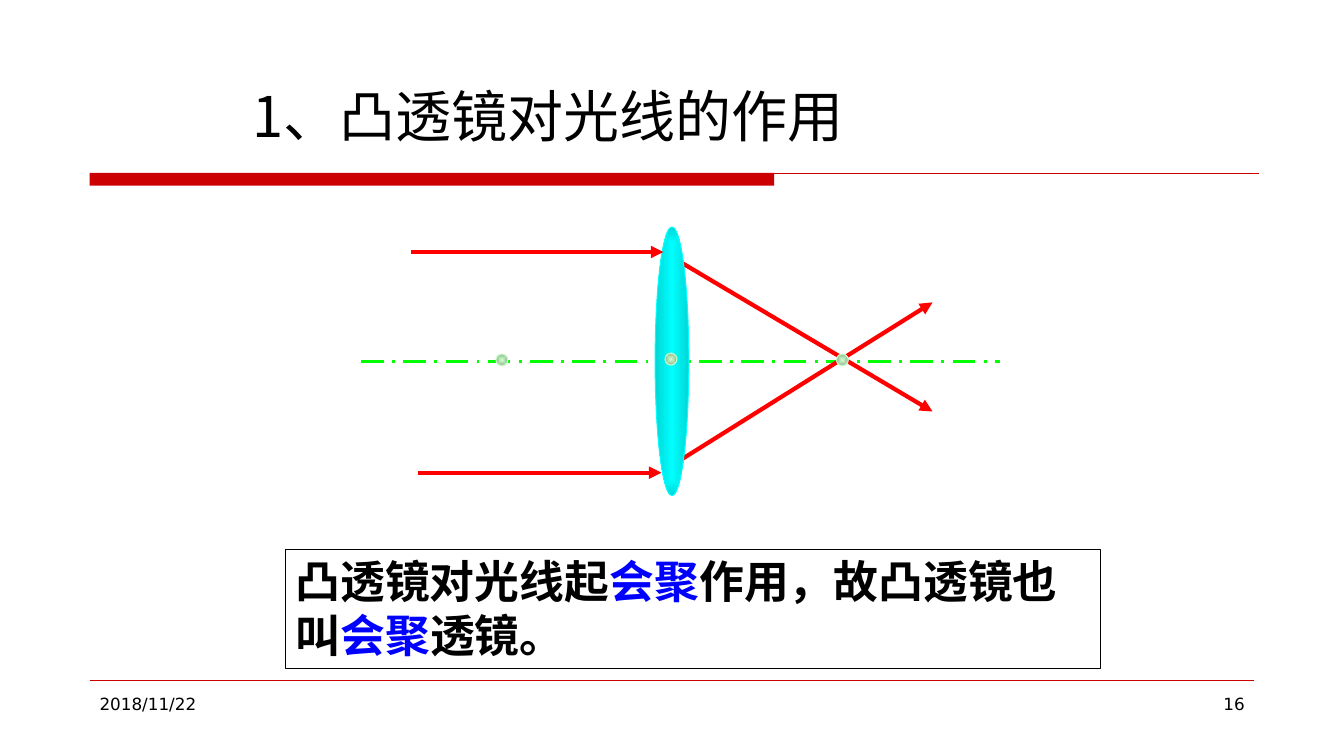
import pptx
import pptx.util
import pptx.oxml
import pptx.oxml.ns
from pptx.dml.color import RGBColor
from pptx.enum.dml import MSO_LINE
from pptx.enum.shapes import MSO_CONNECTOR, MSO_SHAPE
from pptx.enum.text import PP_ALIGN
from pptx.util import Cm

BLACK, RED, CRIMSON, GREEN, BLUE = "000000", "FF0000", "CC0000", "00FF00", "0000FF"
CJK_FONT = "Noto Sans CJK SC"
NAMESPACE = pptx.oxml.ns.nsdecls("a")


def add_line(x1, y1, x2, y2, color, width, arrow=False):
    line = slide.shapes.add_connector(
        MSO_CONNECTOR.STRAIGHT, Cm(x1), Cm(y1), Cm(x2), Cm(y2))
    line.line.color.rgb = RGBColor.from_string(color)
    line.line.width = pptx.util.Pt(width)
    if arrow:
        line.line._get_or_add_ln().append(
            pptx.oxml.parse_xml(f'<a:tailEnd {NAMESPACE} type="triangle"/>'))
    line._element.spPr.append(pptx.oxml.parse_xml(f"<a:effectLst {NAMESPACE}/>"))
    return line


def add_text(x, y, width, height, runs, size, font, align=PP_ALIGN.LEFT, bold=False):
    box = slide.shapes.add_textbox(Cm(x), Cm(y), Cm(width), Cm(height))
    box.text_frame.word_wrap = True
    paragraph = box.text_frame.paragraphs[0]
    paragraph.alignment = align
    for text, color in runs:
        run = paragraph.add_run()
        run.text = text
        run.font.color.rgb = RGBColor.from_string(color)
    paragraph.font.size = pptx.util.Pt(size)
    paragraph.font.bold = bold
    paragraph.font.name = font
    paragraph.font._element.append(
        pptx.oxml.parse_xml(f'<a:ea {NAMESPACE} typeface="{CJK_FONT}"/>'))
    return box


presentation = pptx.Presentation()
presentation.slide_width, presentation.slide_height = Cm(33.87), Cm(19.05)
slide = presentation.slides.add_slide(presentation.slide_layouts[6])

# Title rule and footer rule
bar = slide.shapes.add_shape(MSO_SHAPE.RECTANGLE, Cm(2.26), Cm(4.36), Cm(17.25), Cm(0.32))
bar.shadow.inherit = False
bar.fill.solid()
bar.fill.fore_color.rgb = RGBColor.from_string(CRIMSON)
bar.line.fill.background()
add_line(2.26, 4.36, 31.72, 4.36, CRIMSON, 0.75)
add_line(2.26, 17.15, 31.6, 17.15, CRIMSON, 0.25)

# Date and slide number
add_text(2.26, 17.35, 7.34, 1.32, [("2018/11/22", BLACK)], 12, "DejaVu Sans")
add_text(24.28, 17.35, 7.34, 1.32, [("16", BLACK)], 12, "DejaVu Sans", PP_ALIGN.RIGHT)

# Optical axis and refracted rays, behind the lens
axis = add_line(9.1, 9.1, 25.2, 9.1, GREEN, 2)
axis.line.dash_style = MSO_LINE.LONG_DASH_DOT
add_line(16.72, 6.35, 23.5, 10.37, RED, 3, arrow=True)
add_line(16.72, 11.86, 23.5, 7.62, RED, 3, arrow=True)

# Conclusion
conclusion = add_text(
    7.2, 13.84, 20.53, 3,
    [("凸透镜对光线起", BLACK), ("会聚", BLUE), ("作用，故凸透镜也叫", BLACK),
     ("会聚", BLUE), ("透镜。", BLACK)],
    32, "Times New Roman", bold=True)
conclusion.line.color.rgb = RGBColor.from_string(BLACK)
conclusion.line.width = pptx.util.Pt(0.75)

# Lens, incoming rays, then optical centre and the two foci
ellipses = [
    (16.51, 5.72, 0.85, 6.77, "00FFFF", "00D6D6", 0.75),
    (16.76, 8.9, 0.3, 0.3, "CCFFCC", "92B692", 0),
    (21.08, 8.92, 0.3, 0.3, "CCFFCC", "92B692", 0),
    (12.5, 8.92, 0.3, 0.3, "CCFFCC", "92B692", 0),
]
for index, (x, y, width, height, inner, outer, outline) in enumerate(ellipses):
    ellipse = slide.shapes.add_shape(MSO_SHAPE.OVAL, Cm(x), Cm(y), Cm(width), Cm(height))
    ellipse.shadow.inherit = False
    ellipse.fill.gradient()
    gradient = ellipse._element.spPr.find(pptx.oxml.ns.qn("a:gradFill"))
    gradient.getparent().replace(gradient, pptx.oxml.parse_xml(
        f'<a:gradFill {NAMESPACE} rotWithShape="1"><a:gsLst>'
        f'<a:gs pos="0"><a:srgbClr val="{inner}"/></a:gs>'
        f'<a:gs pos="100000"><a:srgbClr val="{outer}"/></a:gs></a:gsLst>'
        '<a:path path="shape"><a:fillToRect l="50000" t="50000" r="50000" b="50000"/>'
        '</a:path></a:gradFill>'))
    ellipse.line.color.rgb = RGBColor.from_string(inner)
    ellipse.line.width = pptx.util.Pt(outline)
    if index == 0:
        add_line(10.37, 6.35, 16.72, 6.35, RED, 3, arrow=True)
        add_line(10.53, 11.91, 16.67, 11.91, RED, 3, arrow=True)

# Title
add_text(6.12, 1.93, 16.74, 1.96, [("1、凸透镜对光线的作用", BLACK)], 40, CJK_FONT)

presentation.save("out.pptx")
